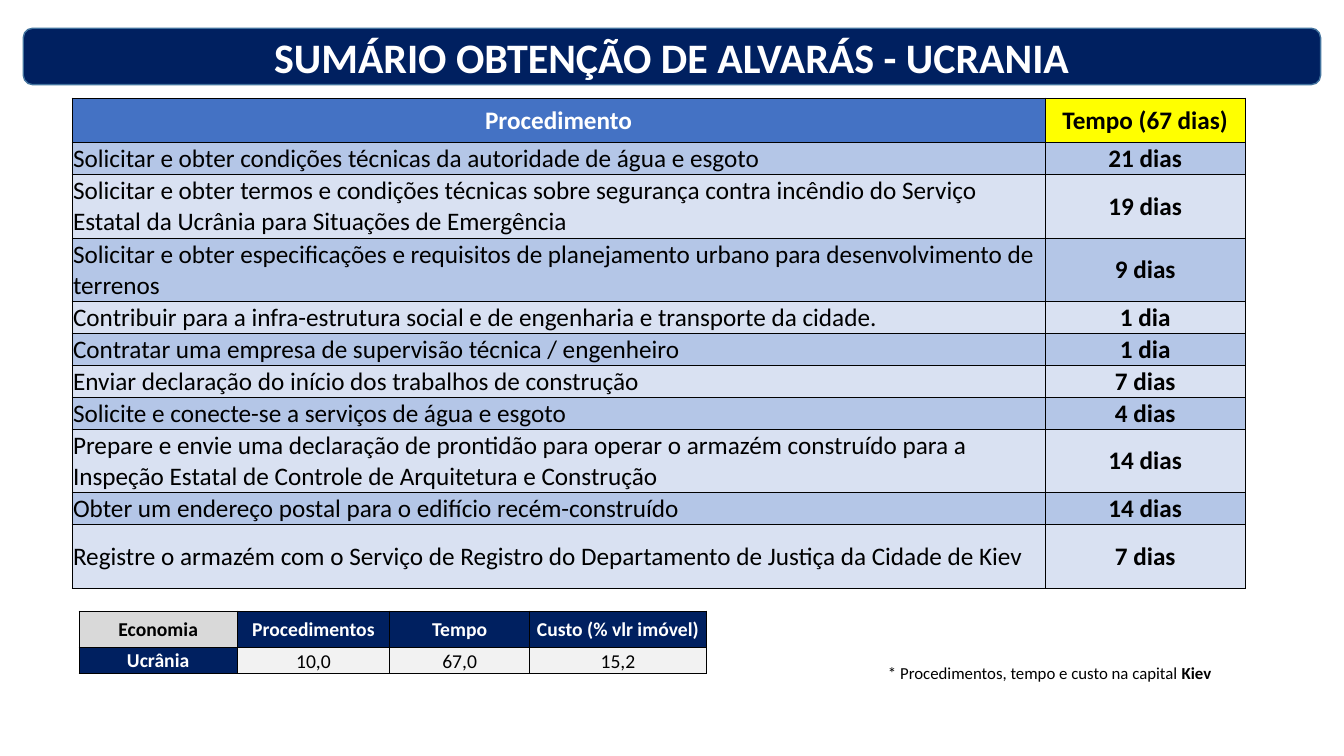
from lxml.etree import SubElement
from pptx import Presentation
from pptx.dml.color import RGBColor
from pptx.enum.shapes import MSO_SHAPE
from pptx.enum.text import MSO_ANCHOR, MSO_AUTO_SIZE, PP_ALIGN
from pptx.oxml.ns import qn
from pptx.util import Inches, Pt

NAVY, BLUE, YELLOW = "002060", "4472C4", "FFFF00"
BANDS = ("B4C6E7", "D9E1F2")
GRAY, PALE = "D9D9D9", "F2F2F2"
BLACK, WHITE, OUTLINE = "000000", "FFFFFF", "43739E"


def color(hex_code):
    return RGBColor.from_string(hex_code)


class SlideBuilder:
    """Places elements by percentages of the slide's width and height."""
    font = "Calibri"

    def __init__(self, presentation):
        self.width, self.height = presentation.slide_width, presentation.slide_height
        self.slide = presentation.slides.add_slide(presentation.slide_layouts[6])

    def x(self, share):
        return round(self.width * share / 100)

    def y(self, share):
        return round(self.height * share / 100)

    def box(self, left, top, width, height):
        return self.x(left), self.y(top), self.x(width), self.y(height)

    def style(self, paragraph, size, ink, bold=None, align=PP_ALIGN.LEFT):
        paragraph.alignment = align
        font = paragraph.font
        font.name, font.size, font.bold = self.font, Pt(size), bold
        font.color.rgb = color(ink)

    def banner(self, text, *place):
        banner = self.slide.shapes.add_shape(MSO_SHAPE.ROUNDED_RECTANGLE, *self.box(*place))
        banner.shadow.inherit = False
        banner.fill.solid()
        banner.fill.fore_color.rgb = color(NAVY)
        banner.line.color.rgb = color(OUTLINE)
        banner.line.width = Pt(1)
        banner.text_frame.vertical_anchor = MSO_ANCHOR.MIDDLE
        banner.text_frame.text = text
        self.style(banner.text_frame.paragraphs[0], 30, WHITE, True, PP_ALIGN.CENTER)

    def note(self, text, emphasis, *place):
        frame = self.slide.shapes.add_textbox(*self.box(*place)).text_frame
        frame.word_wrap = False
        frame.auto_size = MSO_AUTO_SIZE.SHAPE_TO_FIT_TEXT
        paragraph = frame.paragraphs[0]
        paragraph.add_run().text = text
        strong = paragraph.add_run()
        strong.text, strong.font.bold = emphasis, True
        self.style(paragraph, 12, BLACK)

    def table(self, left, top, columns, rows):
        place = self.box(left, top, sum(columns), sum(rows))
        table = self.slide.shapes.add_table(len(rows), len(columns), *place).table
        table.first_row = table.horz_banding = False
        for column, share in zip(table.columns, columns):
            column.width = self.x(share)
        for row, share in zip(table.rows, rows):
            row.height = self.y(share)
        return table

    def cell(self, cell, text, size, fill, ink=BLACK, bold=True,
             align=PP_ALIGN.CENTER, anchor=MSO_ANCHOR.MIDDLE):
        cell.text = text
        cell.margin_left = cell.margin_right = cell.margin_top = Inches(0.01)
        cell.margin_bottom = 0
        cell.vertical_anchor = anchor
        self.style(cell.text_frame.paragraphs[0], size, ink, bold, align)
        properties = cell._tc.get_or_add_tcPr()
        for side in ("a:lnL", "a:lnR", "a:lnT", "a:lnB"):
            border = SubElement(properties, qn(side), w=str(Pt(0.5)))
            solid = SubElement(border, qn("a:solidFill"))
            SubElement(solid, qn("a:srgbClr"), val=BLACK)
        cell.fill.solid()
        cell.fill.fore_color.rgb = color(fill)


# Procedure, duration, row height in text lines
PROCEDURES = [
    ("Solicitar e obter condições técnicas da autoridade de água e esgoto", "21 dias", 1),
    ("Solicitar e obter termos e condições técnicas sobre segurança contra incêndio do "
     "Serviço Estatal da Ucrânia para Situações de Emergência", "19 dias", 2),
    ("Solicitar e obter especificações e requisitos de planejamento urbano para "
     "desenvolvimento de terrenos", "9 dias", 2),
    ("Contribuir para a infra-estrutura social e de engenharia e transporte da cidade.",
     "1 dia", 1),
    ("Contratar uma empresa de supervisão técnica / engenheiro", "1 dia", 1),
    ("Enviar declaração do início dos trabalhos de construção", "7 dias", 1),
    ("Solicite e conecte-se a serviços de água e esgoto", "4 dias", 1),
    ("Prepare e envie uma declaração de prontidão para operar o armazém construído para a "
     "Inspeção Estatal de Controle de Arquitetura e Construção", "14 dias", 2),
    ("Obter um endereço postal para o edifício recém-construído", "14 dias", 1),
    ("Registre o armazém com o Serviço de Registro do Departamento de Justiça da Cidade "
     "de Kiev", "7 dias", 2),
]
ECONOMY = [("Economia", "Ucrânia"), ("Procedimentos", "10,0"),
           ("Tempo", "67,0"), ("Custo (% vlr imóvel)", "15,2")]
LINE_HEIGHT = 4.21


def main():
    presentation = Presentation()
    presentation.slide_width, presentation.slide_height = Inches(13.33), Inches(7.5)
    page = SlideBuilder(presentation)

    # Title and footnote
    page.banner("SUMÁRIO OBTENÇÃO DE ALVARÁS - UCRANIA", 1.73, 3.73, 96.53, 7.47)
    page.note("* Procedimentos, tempo e custo na capital ", "Kiev", 65.33, 87.07, 25.9, 4)

    # Economy summary
    summary = page.table(5.88, 80.8, [11.78, 11.33, 10.43, 13.13], [4.8, 3.5])
    for index, (heading, value) in enumerate(ECONOMY):
        top, bottom = summary.cell(0, index), summary.cell(1, index)
        if index == 0:
            page.cell(top, heading, 14, GRAY)
            page.cell(bottom, value, 14, NAVY, WHITE)
        else:
            page.cell(top, heading, 14, NAVY, WHITE)
            page.cell(bottom, value, 14, PALE, bold=False, anchor=MSO_ANCHOR.BOTTOM)

    # Procedures and durations
    heights = [5.87] + [lines * LINE_HEIGHT for _, _, lines in PROCEDURES]
    steps = page.table(5.36, 12.97, [72.4, 14.9], heights)
    page.cell(steps.cell(0, 0), "Procedimento", 18, BLUE, WHITE)
    page.cell(steps.cell(0, 1), "Tempo (67 dias)", 18, YELLOW)
    for row, (procedure, duration, _) in enumerate(PROCEDURES, start=1):
        band = BANDS[(row - 1) % 2]
        page.cell(steps.cell(row, 0), procedure, 18, band, bold=False, align=PP_ALIGN.LEFT)
        page.cell(steps.cell(row, 1), duration, 18, band)

    presentation.save("out.pptx")


if __name__ == "__main__":
    main()
